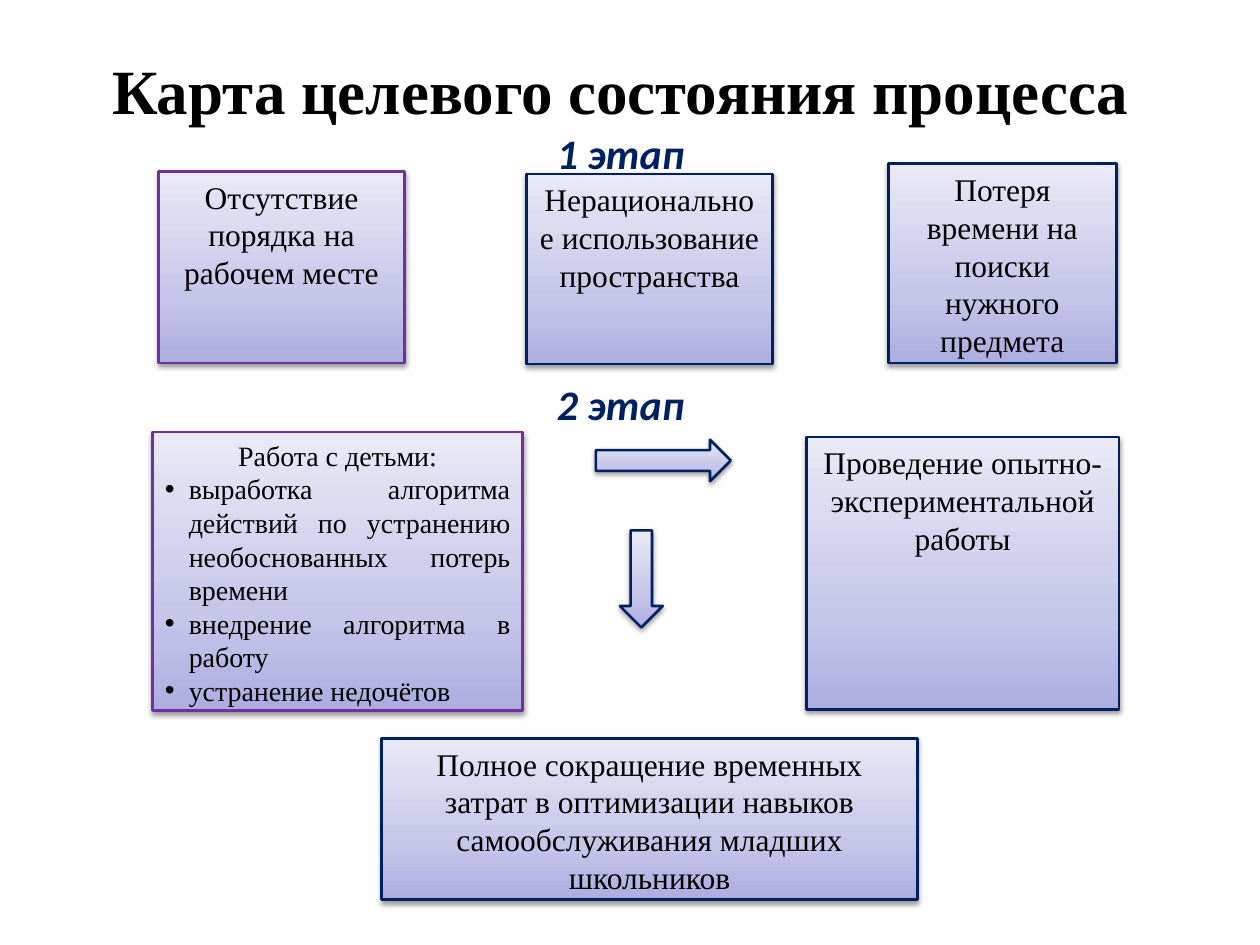
from lxml import etree
from pptx import Presentation
from pptx import util as u
from pptx.dml.color import RGBColor
from pptx.enum import shapes, text
from pptx.oxml import ns


class Theme:
    navy, purple, black = "002060", "7030A0", "000000"
    gradient = [(0, "ADADE1"), (35, "C6C6E9"), (100, "E9E9F7")]
    serif, sans = "Times New Roman", "Calibri"
    title, stage, body, small = 36, 24, 18, 16
    outline = 1.5


HEADING_AREA = (0.75, 0.36, 8.35, 3.13)
TITLE = "Карта целевого состояния процесса"
STAGES = ["1 этап", "2 этап"]
STAGE_GAPS = [0, 115]  # points above each stage label

# left, top, width, height, outline, type size, heading, bullets
CARDS = [
    (1.26, 1.36, 1.95, 1.52, Theme.purple, Theme.body,
     "Отсутствие порядка на рабочем месте", []),
    (4.18, 1.38, 1.95, 1.51, Theme.navy, Theme.body,
     "Нерациональное использование пространства", []),
    (7.05, 1.3, 1.81, 1.58, Theme.navy, Theme.body,
     "Потеря времени на поиски нужного предмета", []),
    (1.21, 3.43, 2.94, 2.21, Theme.purple, Theme.small,
     "Работа с детьми:",
     ["выработка алгоритма действий по устранению необоснованных потерь времени",
      "внедрение алгоритма в работу",
      "устранение недочётов"]),
    (6.4, 3.47, 2.48, 2.16, Theme.navy, Theme.body,
     "Проведение опытно-экспериментальной работы", []),
    (3.03, 5.86, 4.25, 1.28, Theme.navy, Theme.body,
     "Полное сокращение временных затрат в оптимизации навыков "
     "самообслуживания младших школьников", []),
]
ARROWS = [
    (shapes.MSO_SHAPE.RIGHT_ARROW, (4.73, 3.49, 1.07, 0.33)),
    (shapes.MSO_SHAPE.DOWN_ARROW, (4.92, 4.21, 0.34, 0.77)),
]


def inches(place):
    return [u.Inches(value) for value in place]


def add_element(parent, tag, **attributes):
    return etree.SubElement(parent, ns.qn(tag),
                            {key: str(value) for key, value in attributes.items()})


def add_panel(page, kind, place, outline):
    """Add a preset shape with the shared gradient, outline and soft shadow."""
    panel = page.shapes.add_shape(kind, *inches(place))
    panel.fill.gradient()
    panel.fill.gradient_angle = 90
    properties = panel._element.spPr
    stops = properties.find(".//" + ns.qn("a:gsLst"))
    for stop in list(stops):
        stops.remove(stop)
    for percent, color in Theme.gradient:
        stop = add_element(stops, "a:gs", pos=percent * 1000)
        add_element(stop, "a:srgbClr", val=color)
    panel.line.color.rgb = RGBColor.from_string(outline)
    panel.line.width = u.Pt(Theme.outline)
    panel.shadow.inherit = False
    shadow = add_element(properties.find(ns.qn("a:effectLst")), "a:outerShdw",
                         blurRad=u.Pt(3.1), dist=u.Pt(1.6), dir=90 * 60000,
                         rotWithShape=0)
    color = add_element(shadow, "a:srgbClr", val=Theme.black)
    add_element(color, "a:alpha", val=38000)
    return panel


def add_bullet(para):
    settings = para._p.get_or_add_pPr()
    settings.set("marL", str(u.Inches(0.19)))
    settings.set("indent", str(u.Inches(-0.19)))
    add_element(settings, "a:buFont", typeface="Arial")
    add_element(settings, "a:buChar", char="•")


def format_para(para, size, font=Theme.serif, color=Theme.black,
                align=text.PP_ALIGN.CENTER, bold=False, italic=False):
    para.alignment = align
    for span in para.runs:
        span.font.name = font
        span.font.size = u.Pt(size)
        span.font.bold, span.font.italic = bold, italic
        span.font.color.rgb = RGBColor.from_string(color)


def add_headings(page):
    frame = page.shapes.add_textbox(*inches(HEADING_AREA)).text_frame
    frame.word_wrap = True
    frame.margin_top = u.Inches(0.05)
    frame.text = "\n".join([TITLE] + STAGES)
    title, *stages = frame.paragraphs
    format_para(title, Theme.title, bold=True)
    for para, gap in zip(stages, STAGE_GAPS):
        para.space_before = u.Pt(gap)
        format_para(para, Theme.stage, Theme.sans, Theme.navy, bold=True, italic=True)


def add_card(page, left, top, width, height, outline, size, heading, bullets):
    box = add_panel(page, shapes.MSO_SHAPE.RECTANGLE, (left, top, width, height), outline)
    frame = box.text_frame
    frame.word_wrap = True
    frame.vertical_anchor = text.MSO_ANCHOR.TOP
    frame.text = "\n".join([heading] + bullets)
    first, *items = frame.paragraphs
    format_para(first, size)
    for para in items:
        add_bullet(para)
        format_para(para, size, align=text.PP_ALIGN.JUSTIFY)


def main():
    deck = Presentation()
    deck.slide_width, deck.slide_height = u.Inches(10), u.Inches(7.5)
    page = deck.slides.add_slide(deck.slide_layouts[6])
    add_headings(page)
    for card in CARDS:
        add_card(page, *card)
    for kind, place in ARROWS:
        add_panel(page, kind, place, Theme.navy)
    deck.save("out.pptx")


if __name__ == "__main__":
    main()
